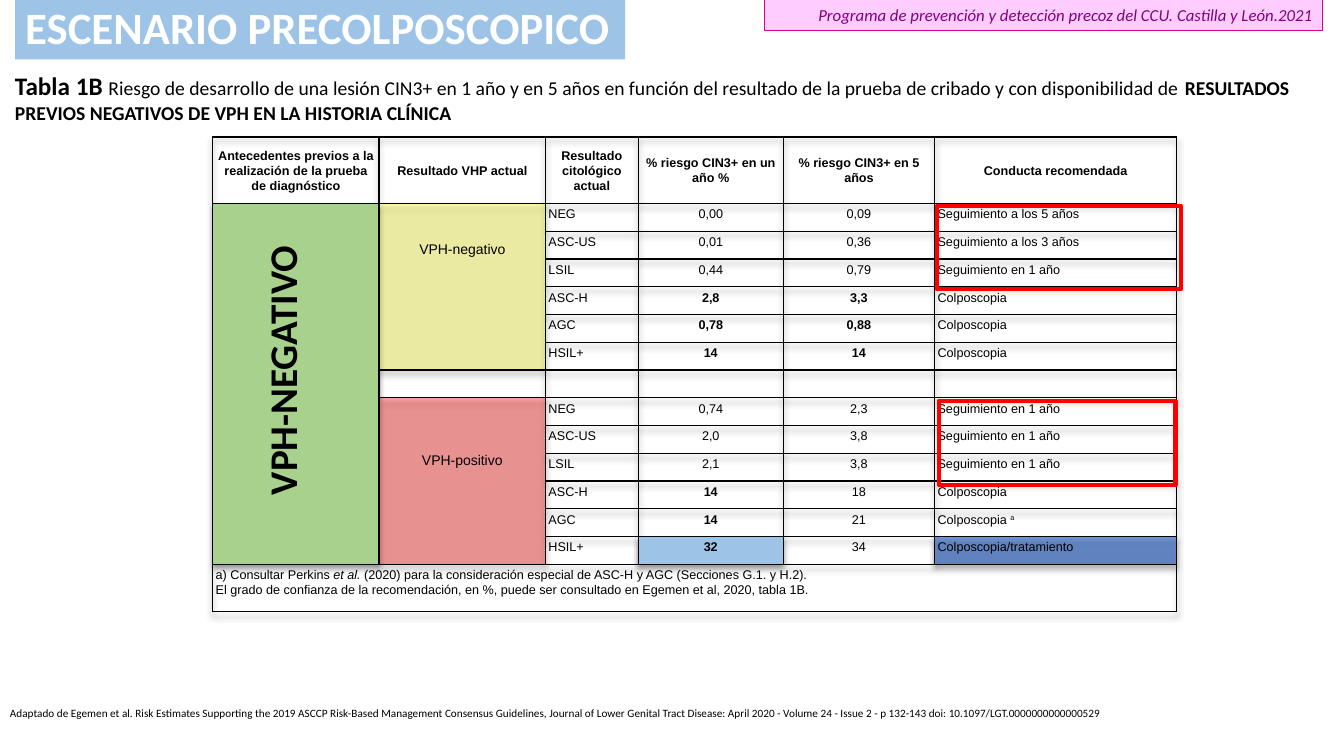
from lxml.etree import SubElement
from pptx import Presentation
from pptx.dml.color import RGBColor
from pptx.enum.shapes import MSO_SHAPE as Shape
from pptx.enum.text import MSO_ANCHOR as Anchor, PP_ALIGN as Align
from pptx.oxml import parse_xml
from pptx.oxml.ns import nsdecls, qn
from pptx.util import Inches, Pt


def color(value):
    return RGBColor.from_string(value)


def write(paragraph, runs, align=Align.LEFT, spacing=1.0, **base):
    """Fill a paragraph with (text, format) pairs; base holds shared font values."""
    paragraph.alignment, paragraph.line_spacing = align, spacing
    for text, extra in runs:
        run = paragraph.add_run()
        run.text = text
        values = {"name": "Calibri", "color": "000000", "bold": False, **base, **extra}
        run.font.color.rgb = color(values.pop("color"))
        if values.pop("superscript", False):
            run._r.get_or_add_rPr().set("baseline", "30000")
        for name, value in values.items():
            setattr(run.font, name, value)


presentation = Presentation()
presentation.slide_width, presentation.slide_height = Inches(13.33), Inches(7.5)
slide = presentation.slides.add_slide(presentation.slide_layouts[5])

# Title
title = slide.shapes.title
title.left, title.top, title.width, title.height = map(Inches, (0.15, 0, 6.05, 0.59))
title.fill.solid()
title.fill.fore_color.rgb = color("9DC3E6")
title.text_frame.vertical_anchor = Anchor.MIDDLE
write(title.text_frame.paragraphs[0], [("ESCENARIO PRECOLPOSCOPICO", {})],
      spacing=0.9, size=Pt(32), bold=True, color="FFFFFF")

# Programme label
label = slide.shapes.add_shape(Shape.RECTANGLE, *map(Inches, (7.58, 0, 5.54, 0.3)))
label.shadow.inherit = False
label.fill.solid()
label.fill.fore_color.rgb = color("FFCCFF")
label.line.color.rgb = color("D60093")
label.line.width = Pt(0.75)
label.text_frame.word_wrap = True
label.text_frame.vertical_anchor = Anchor.TOP
write(label.text_frame.paragraphs[0],
      [("Programa de prevención y detección precoz del CCU. Castilla y León.2021", {})],
      Align.RIGHT, size=Pt(12), italic=True, color="800080")

# Source line and table caption
source = slide.shapes.add_textbox(*map(Inches, (0, 6.96, 11.11, 0.54)))
source.text_frame.word_wrap = False
write(source.text_frame.paragraphs[0], [(
    "Adaptado de Egemen et al. Risk Estimates Supporting the 2019 ASCCP Risk-Based Management "
    "Consensus Guidelines, Journal of Lower Genital Tract Disease: April 2020 - Volume 24 - "
    "Issue 2 - p 132-143 doi: 10.1097/LGT.0000000000000529", {})], size=Pt(8))

caption = slide.shapes.add_textbox(*map(Inches, (0.05, 0.65, 13.29, 0.64)))
caption.text_frame.word_wrap = True
write(caption.text_frame.paragraphs[0], [
    ("Tabla 1B ", {"size": Pt(18), "bold": True}),
    ("Riesgo de desarrollo de una lesión CIN3+ en 1 año y en 5 años en función del resultado "
     "de la prueba de cribado y con disponibilidad de ", {}),
    ("RESULTADOS PREVIOS NEGATIVOS DE VPH EN LA HISTORIA CLÍNICA", {"bold": True}),
], size=Pt(14))

# Table contents
HEADERS = ["Antecedentes previos a la realización de la prueba de diagnóstico",
           "Resultado VHP actual", "Resultado citológico actual",
           "% riesgo CIN3+ en un año %", "% riesgo CIN3+ en 5 años", "Conducta recomendada"]
RESULTS = [
    ("NEG", "0,00", "0,09", "Seguimiento a los 5 años"),
    ("ASC-US", "0,01", "0,36", "Seguimiento a los 3 años"),
    ("LSIL", "0,44", "0,79", "Seguimiento en 1 año"),
    ("ASC-H", "2,8", "3,3", "Colposcopia"),
    ("AGC", "0,78", "0,88", "Colposcopia"),
    ("HSIL+", "14", "14", "Colposcopia"),
    ("", "", "", ""),
    ("NEG", "0,74", "2,3", "Seguimiento en 1 año"),
    ("ASC-US", "2,0", "3,8", "Seguimiento en 1 año"),
    ("LSIL", "2,1", "3,8", "Seguimiento en 1 año"),
    ("ASC-H", "14", "18", "Colposcopia"),
    ("AGC", "14", "21", "Colposcopia "),
    ("HSIL+", "32", "34", "Colposcopia/tratamiento"),
]
BOLD_CELLS = {(row, column) for row in (4, 5, 6) for column in (3, 4)}
BOLD_CELLS |= {(row, 3) for row in (11, 12, 13)}
# (row, column): colour and opacity in percent
FILLS = {(1, 0): ("A9D18E", 100), (1, 1): ("FFFF00", 28), (8, 1): ("FF0000", 34),
         (13, 3): ("9DC3E6", 100), (13, 5): ("4472C4", 74)}

# Table grid
frame = slide.shapes.add_table(15, 6, *map(Inches, (2.11, 1.36, 9.56, 4.71)))
table = frame.table
for column, width in zip(table.columns, (1.65, 1.65, 0.92, 1.44, 1.5, 2.4)):
    column.width = Inches(width)
for row, height in zip(table.rows, [0.66] + [3.58 / 13] * 13 + [0.47]):
    row.height = Inches(height)
table.first_row = table.horz_banding = False
properties = table._tbl.tblPr
properties.find(qn("a:tableStyleId")).text = "{2D5ABB26-0587-4C30-8999-92F81FD0307C}"
properties.insert(0, parse_xml(
    f'<a:effectLst {nsdecls("a")}><a:outerShdw blurRad="50800" dist="38100" dir="5400000" '
    'algn="t" rotWithShape="0"><a:srgbClr val="000000"><a:alpha val="40000"/></a:srgbClr>'
    '</a:outerShdw></a:effectLst>'))
for first, last in (((1, 0), (13, 0)), ((1, 1), (6, 1)), ((8, 1), (13, 1)), ((14, 0), (14, 5))):
    table.cell(*first).merge(table.cell(*last))

# Cell margins, borders and fills
for row in range(15):
    for column in range(6):
        cell = table.cell(row, column)
        for side in ("left", "right", "top", "bottom"):
            setattr(cell, f"margin_{side}", Inches(0.03))
        cell_properties = cell._tc.get_or_add_tcPr()
        for edge in ("lnL", "lnR", "lnT", "lnB"):
            cell_properties.append(parse_xml(
                f'<a:{edge} {nsdecls("a")} w="12700"><a:solidFill><a:srgbClr val="000000"/>'
                f'</a:solidFill></a:{edge}>'))
        if (row, column) in FILLS:
            value, opacity = FILLS[row, column]
            cell.fill.solid()
            cell.fill.fore_color.rgb = color(value)
            if opacity < 100:
                fill_color = cell_properties.find(f'{qn("a:solidFill")}/{qn("a:srgbClr")}')
                SubElement(fill_color, qn("a:alpha")).set("val", str(opacity * 1000))
        else:
            cell.fill.background()

# Table text
cell_format = {"spacing": 1.07, "name": "Arial", "size": Pt(9)}
for column, text in enumerate(HEADERS):
    cell = table.cell(0, column)
    cell.vertical_anchor = Anchor.MIDDLE
    write(cell.text_frame.paragraphs[0], [(text, {"bold": True})], Align.CENTER, **cell_format)
for row, texts in enumerate(RESULTS, 1):
    for column, text in enumerate(texts, 2):
        if text:
            runs = [(text, {"bold": (row, column) in BOLD_CELLS})]
            if text.endswith(" "):
                runs.append(("a", {"superscript": True}))
            write(table.cell(row, column).text_frame.paragraphs[0], runs,
                  Align.CENTER if column in (3, 4) else Align.LEFT, **cell_format)
for row, text, margin in ((1, "VPH-negativo", 0.37), (8, "VPH-positivo", 0.54)):
    cell = table.cell(row, 1)
    cell.margin_top = Inches(margin)
    write(cell.text_frame.paragraphs[0], [(text, {"size": Pt(10)})], Align.CENTER, **cell_format)

notes = table.cell(14, 0).text_frame
write(notes.paragraphs[0], [
    ("a) Consultar Perkins ", {}), ("et al.", {"italic": True}),
    (" (2020) para la consideración especial de ASC-H y AGC (Secciones G.1. y H.2).", {}),
], **cell_format)
write(notes.add_paragraph(), [(
    "El grado de confianza de la recomendación, en %, puede ser consultado en "
    "Egemen et al, 2020, tabla 1B.", {})], **cell_format)

# Small type size in empty cells keeps the rows low
for cell in table.iter_cells():
    if not cell.text_frame.text:
        SubElement(cell.text_frame.paragraphs[0]._p, qn("a:endParaRPr")).set("sz", "900")

# Rotated history label
history = slide.shapes.add_textbox(*map(Inches, (1.27, 3.39, 3.05, 0.57)))
history.rotation = 270
history.text_frame.word_wrap = True
write(history.text_frame.paragraphs[0], [("VPH-NEGATIVO", {})], Align.CENTER,
      size=Pt(28), bold=True)

# Red frames around the follow-up advice
for left, top, width in ((9.29, 2.04, 2.42), (9.31, 3.98, 2.35)):
    highlight = slide.shapes.add_shape(
        Shape.RECTANGLE, *map(Inches, (left, top, width, 0.83)))
    highlight.shadow.inherit = False
    highlight.fill.background()
    highlight.line.color.rgb = color("FF0000")
    highlight.line.width = Pt(3)

presentation.save("out.pptx")
